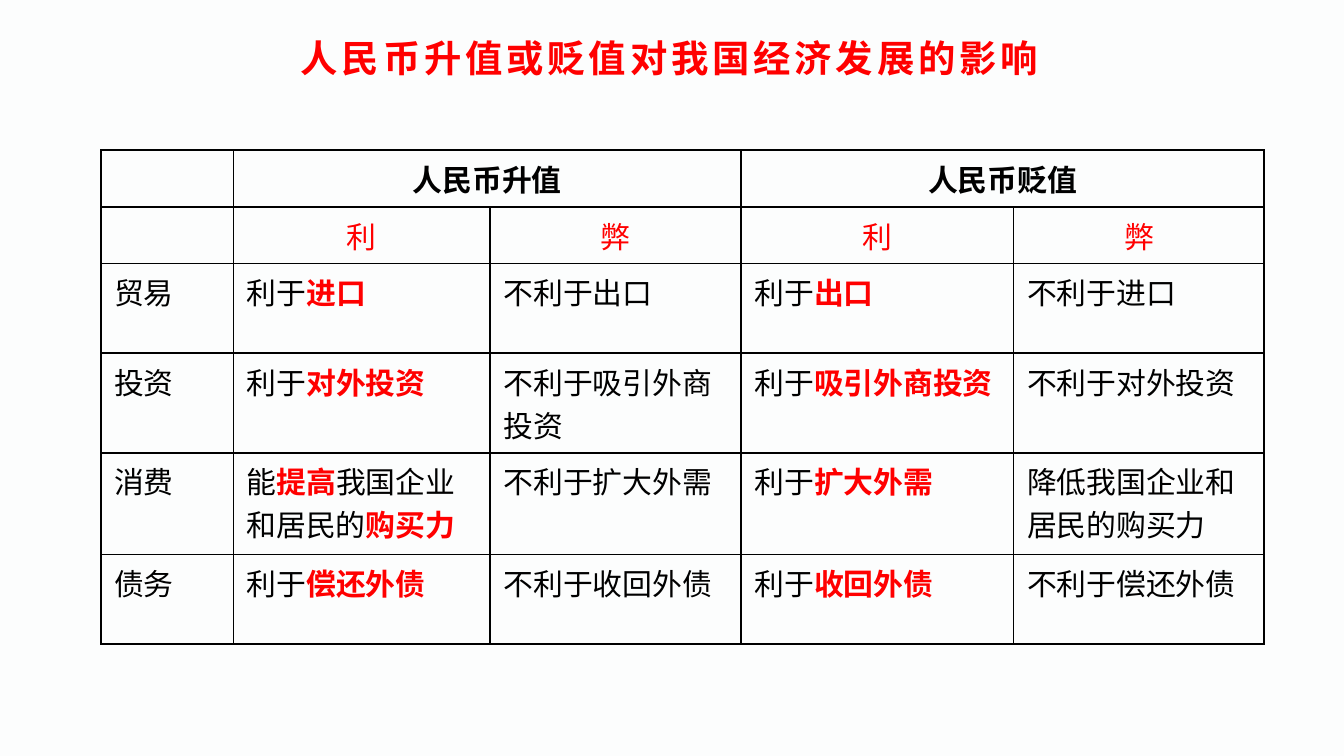
from lxml.etree import SubElement
from pptx import Presentation
from pptx.dml.color import RGBColor
from pptx.enum.lang import MSO_LANGUAGE_ID as LANG
from pptx.enum.text import MSO_ANCHOR, PP_ALIGN
from pptx.oxml.ns import qn
from pptx.util import Pt

COLORS = {"background": "FCFDFD", "ink": "000000", "accent": "FF0000"}
COLUMN_WIDTHS = [71, 137.6, 134.5, 146, 134.2]
ROW_HEIGHTS = [30.4, 30.2, 48.2, 53.3, 54.4, 48]
EFFECTS = [
    ["", "人民币升值", "", "人民币贬值", ""],
    ["", "利", "弊", "利", "弊"],
    ["贸易", "利于*进口*", "不利于出口", "利于*出口*", "不利于进口"],
    ["投资", "利于*对外投资*", "不利于吸引外商投资", "利于*吸引外商投资*", "不利于对外投资"],
    ["消费", "能*提高*我国企业和居民的*购买力*", "不利于扩大外需", "利于*扩大外需*",
     "降低我国企业和居民的购买力"],
    ["债务", "利于*偿还外债*", "不利于收回外债", "利于*收回外债*", "不利于偿还外债"],
]


def write(frame, text, size=16, color="ink", bold=False, align=PP_ALIGN.LEFT, spacing=0):
    frame.word_wrap = True
    paragraph = frame.paragraphs[0]
    paragraph.alignment = align
    for index, part in enumerate(text.split("*")):
        if not part:
            continue
        emphasized = index % 2 == 1
        run = paragraph.add_run()
        run.text = part
        run.font.name = "Arial"
        run.font.size = Pt(size)
        run.font.bold = bold or emphasized
        run.font.language_id = LANG.SIMPLIFIED_CHINESE
        run.font.color.rgb = RGBColor.from_string(COLORS["accent" if emphasized else color])
        if spacing:
            run.font._element.set("spc", str(spacing * 100))
    SubElement(paragraph._p, qn("a:endParaRPr"), sz=str(size * 100))


def outline(cell):
    properties = cell._tc.get_or_add_tcPr()
    for position, side in enumerate(("a:lnL", "a:lnR", "a:lnT", "a:lnB")):
        border = properties.makeelement(qn(side), {"w": str(Pt(1))})
        fill = SubElement(border, qn("a:solidFill"))
        SubElement(fill, qn("a:srgbClr"), val=COLORS["ink"])
        properties.insert(position, border)


def add_title(slide, left, top, width, height):
    title = slide.shapes.add_textbox(Pt(left), Pt(top), Pt(width), Pt(height))
    title.text_frame.vertical_anchor = MSO_ANCHOR.MIDDLE
    write(title.text_frame, "人民币升值或贬值对我国经济发展的影响", size=20,
          color="accent", bold=True, align=PP_ALIGN.CENTER, spacing=2)


def add_effects(slide, left, top, width, height):
    effects = slide.shapes.add_table(len(EFFECTS), len(COLUMN_WIDTHS),
                                     Pt(left), Pt(top), Pt(width), Pt(height)).table
    effects.first_row = effects.horz_banding = False
    for column, share in zip(effects.columns, COLUMN_WIDTHS):
        column.width = Pt(width * share / sum(COLUMN_WIDTHS))
    for row, share in zip(effects.rows, ROW_HEIGHTS):
        row.height = Pt(height * share / sum(ROW_HEIGHTS))
    header_formats = [
        {"bold": True, "align": PP_ALIGN.CENTER},
        {"color": "accent", "align": PP_ALIGN.CENTER},
    ]
    for r, texts in enumerate(EFFECTS):
        text_format = header_formats[r] if r < len(header_formats) else {}
        for c, text in enumerate(texts):
            cell = effects.cell(r, c)
            cell.fill.background()
            outline(cell)
            write(cell.text_frame, text, **text_format)
    for c in (1, 3):
        effects.cell(0, c).merge(effects.cell(0, c + 1))


def main():
    deck = Presentation()
    deck.slide_width, deck.slide_height = Pt(720), Pt(405)
    slide = deck.slides.add_slide(deck.slide_layouts[6])
    slide.background.fill.solid()
    slide.background.fill.fore_color.rgb = RGBColor.from_string(COLORS["background"])
    add_title(slide, 38.2, 18, 640.8, 26)
    add_effects(slide, 54, 80.5, sum(COLUMN_WIDTHS), sum(ROW_HEIGHTS))
    deck.save("out.pptx")


if __name__ == "__main__":
    main()
